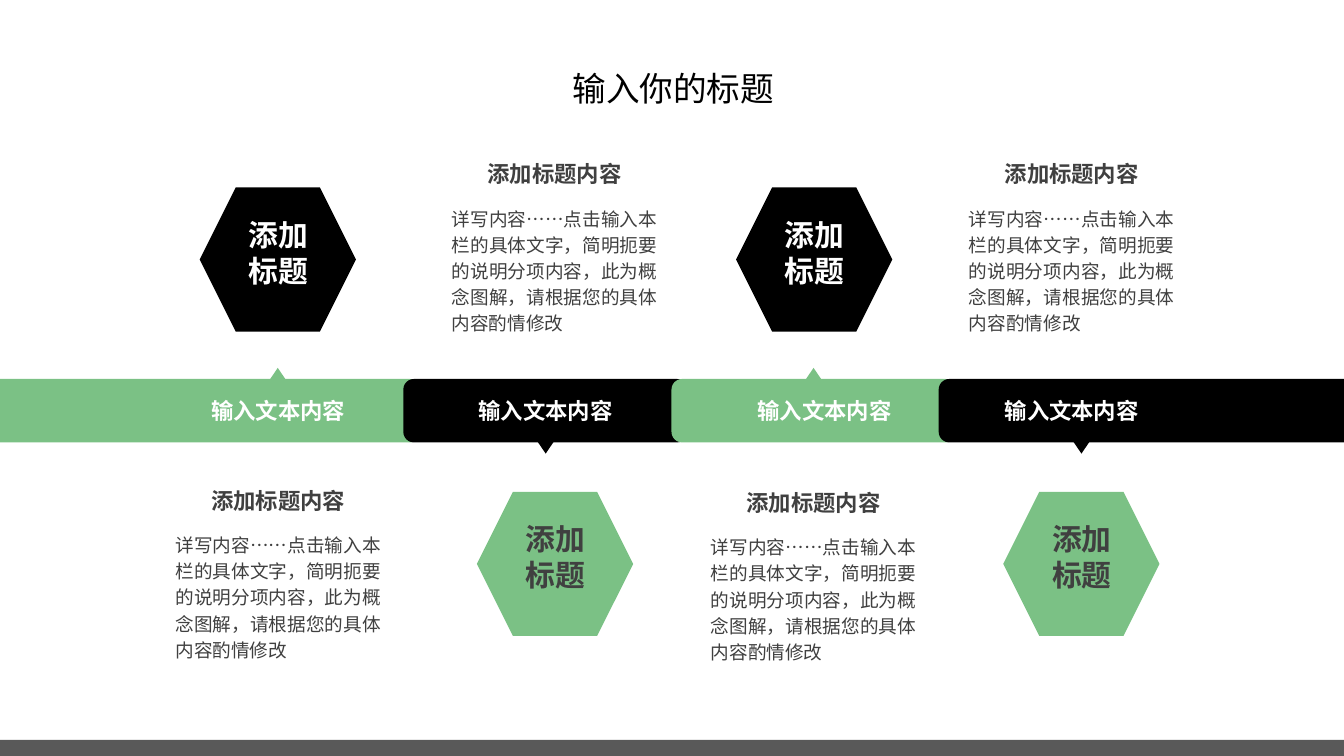
from lxml import etree
from pptx import Presentation
from pptx.dml.color import RGBColor
from pptx.enum.shapes import MSO_SHAPE
from pptx.enum.text import MSO_AUTO_SIZE, PP_ALIGN
from pptx.oxml.ns import qn
from pptx.util import Inches, Pt

FONT = "Noto Sans CJK SC"
COLORS = {"green": "7BC185", "black": "000000", "white": "FFFFFF",
          "text": "404040", "footer": "595959"}
BODY = "详写内容……点击输入本栏的具体文字，简明扼要的说明分项内容，此为概念图解，请根据您的具体内容酌情修改"

prs = Presentation()
prs.slide_width, prs.slide_height = Inches(13.33), Inches(7.5)
s = prs.slides.add_slide(prs.slide_layouts[6])


def add_solid(kind, x, y, w, h, color):
    """Add a preset shape with a flat fill and neither line nor shadow."""
    sp = s.shapes.add_shape(kind, Inches(x), Inches(y), Inches(w), Inches(h))
    sp.shadow.inherit = False
    sp.fill.solid()
    sp.fill.fore_color.rgb = RGBColor.from_string(COLORS[color])
    sp.line.fill.background()
    return sp


def add_text(words, x, y, w, h, size, color, bold=False, align=PP_ALIGN.CENTER, inset=(0, 0)):
    """Add a one-paragraph text box; inset is (horizontal, vertical) in inches."""
    sp = s.shapes.add_textbox(Inches(x), Inches(y), Inches(w), Inches(h))
    tf = sp.text_frame
    tf.word_wrap = True
    tf.auto_size = MSO_AUTO_SIZE.SHAPE_TO_FIT_TEXT
    tf.margin_left = tf.margin_right = Inches(inset[0])
    tf.margin_top = tf.margin_bottom = Inches(inset[1])
    p = tf.paragraphs[0]
    p.text = words
    p.alignment = align
    p.font.size, p.font.bold, p.font.name = Pt(size), bold, FONT
    p.font.color.rgb = RGBColor.from_string(COLORS[color])
    # Chinese glyphs take the East Asian typeface
    etree.SubElement(p._p.pPr.find(qn("a:defRPr")), qn("a:ea"), typeface=FONT)
    return p


add_solid(MSO_SHAPE.RECTANGLE, 0, 7.34, 13.33, 0.19, "footer")
add_text("输入你的标题", 5.58, 0.62, 2.64, 0.5, 24, "black",
         align=PP_ALIGN.LEFT, inset=(0.1, 0.05))

# band left, band width, band label left, hexagon left, heading left, heading top
columns = [
    (-0.16, 4.33, 1.89, 1.98, 1.89, 4.83),
    (4.00, 2.82, 4.54, 4.73, 4.63, 1.59),
    (6.66, 2.82, 7.31, 7.30, 7.20, 4.85),
    (9.31, 4.18, 9.76, 9.95, 9.76, 1.59),
]
for i, (band_x, band_w, label_x, hex_x, head_x, head_y) in enumerate(columns):
    hex_above = i % 2 == 0
    if hex_above:
        band_color, hex_color, hex_text = "green", "black", "white"
        pointer_y, hex_y = 3.65, 1.86
    else:
        band_color, hex_color, hex_text = "black", "green", "text"
        pointer_y, hex_y = 4.36, 4.88

    band = add_solid(MSO_SHAPE.ROUNDED_RECTANGLE, band_x, 3.76, band_w, 0.63, band_color)
    band.adjustments[0] = 0.167
    pointer = add_solid(MSO_SHAPE.ISOSCELES_TRIANGLE, 2.66 + 2.657 * i, pointer_y,
                        0.19, 0.14, band_color)
    pointer.rotation = 0 if hex_above else 180
    add_text("输入文本内容", label_x, 3.94, 1.74, 0.27, 16, "white", True)

    add_solid(MSO_SHAPE.HEXAGON, hex_x, hex_y, 1.55, 1.43, hex_color)
    add_text("添加标题", hex_x + 0.37, hex_y + 0.29, 0.82, 0.72, 21.3, hex_text, True)

    add_text("添加标题内容", head_x, head_y, 1.74, 0.27, 16, "text", True)
    body = add_text(BODY, head_x - 0.15, head_y + 0.43, 2.04, 1.33, 13.3, "text",
                    align=PP_ALIGN.JUSTIFY)
    body.line_spacing = Pt(18.7)

prs.save("out.pptx")
